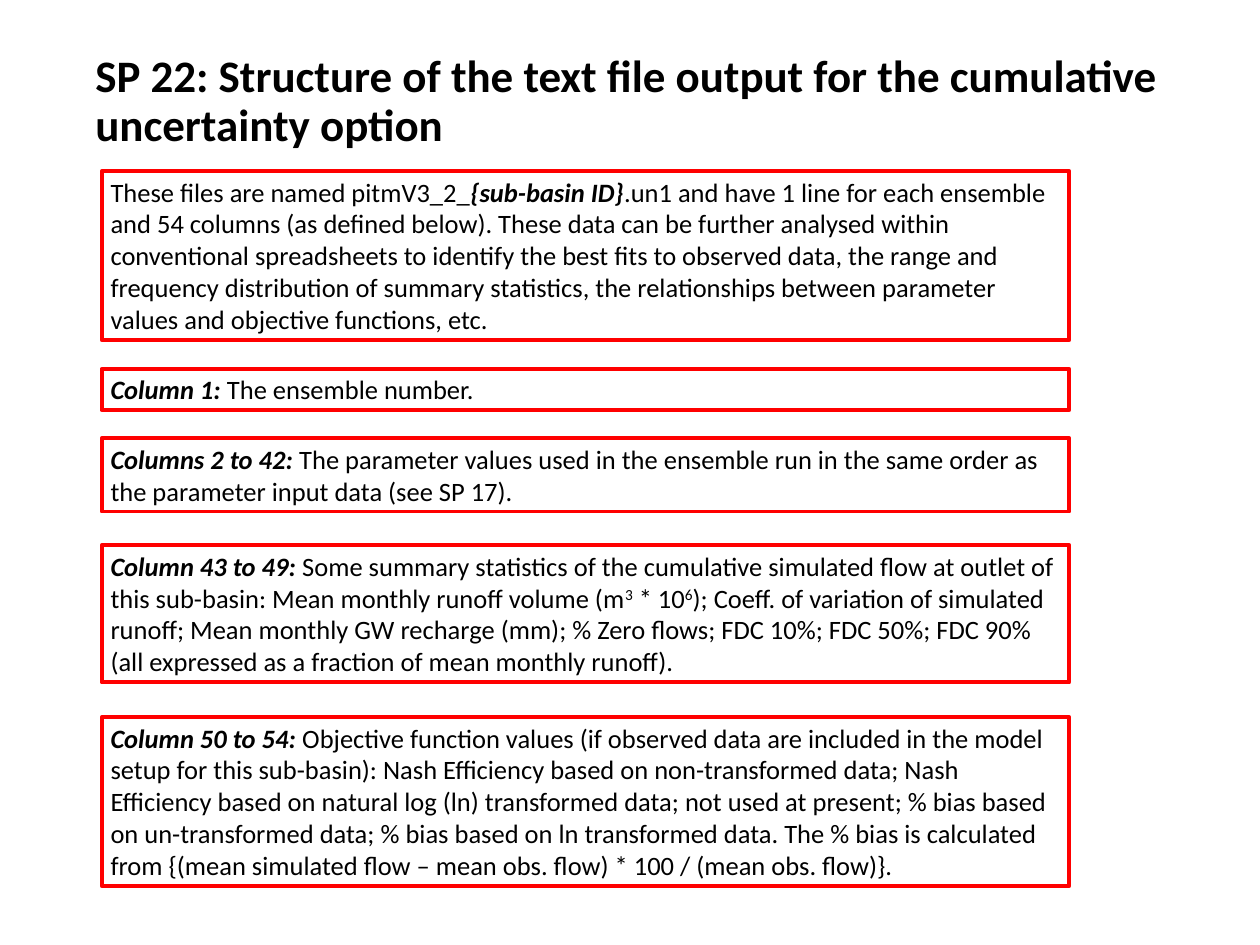
from pptx import Presentation
from pptx.dml.color import RGBColor
from pptx.enum import shapes, text
from pptx.util import Cm, Pt

BLACK = RGBColor(0x00, 0x00, 0x00)
WHITE = RGBColor(0xFF, 0xFF, 0xFF)
RED = RGBColor(0xFF, 0x00, 0x00)
FONT = "Calibri"

BOX_LEFT, BOX_WIDTH = 2.87, 27.31
LINE_HEIGHT, BOX_PADDING = 0.9, 0.27

TITLE = "SP 22: Structure of the text file output for the cumulative uncertainty option"

# Each note: top in cm, number of text lines, runs as (wording, style)
NOTES = [
    (4.83, 5, [
        ("These files are named pitmV3_2_", ""),
        ("{sub-basin ID}", "strong"),
        (".un1 and have 1 line for each ensemble and 54 columns (as defined below). "
         "These data can be further analysed within conventional spreadsheets to "
         "identify the best fits to observed data, the range and frequency "
         "distribution of summary statistics, the relationships between parameter "
         "values and objective functions, etc.", ""),
    ]),
    (10.41, 1, [
        ("Column 1:", "strong"),
        (" The ensemble number.", ""),
    ]),
    (12.37, 2, [
        ("Columns 2 to 42:", "strong"),
        (" The parameter values used in the ensemble run in the same order as the "
         "parameter input data (see SP 17).", ""),
    ]),
    (15.39, 4, [
        ("Column 43 to 49:", "strong"),
        (" Some summary statistics of the cumulative simulated flow at outlet of "
         "this sub-basin: Mean monthly runoff volume (m", ""),
        ("3", "super"),
        (" * 10", ""),
        ("6", "super"),
        ("); Coeff. of variation of simulated runoff; Mean monthly GW recharge (mm); "
         "% Zero flows; FDC 10%; FDC 50%; FDC 90% (all expressed as a fraction of "
         "mean monthly runoff).", ""),
    ]),
    (20.24, 5, [
        ("Column 50 to 54:", "strong"),
        (" Objective function values (if observed data are included in the model "
         "setup for this sub-basin): Nash Efficiency based on non-transformed data; "
         "Nash Efficiency based on natural log (ln) transformed data; not used at "
         "present; % bias based on un-transformed data; % bias based on ln "
         "transformed data. The % bias is calculated from {(mean simulated flow – "
         "mean obs. flow) * 100 / (mean obs. flow)}.", ""),
    ]),
]


def add_run(paragraph, wording, size, bold=False, italic=False):
    run = paragraph.add_run()
    run.text = wording
    font = run.font
    font.name, font.size = FONT, Pt(size)
    font.bold, font.italic = bold, italic
    font.color.rgb = BLACK
    return run


def add_title(slide):
    title = slide.shapes.add_textbox(Cm(2.44), Cm(0.97), Cm(30.66), Cm(3.86))
    frame = title.text_frame
    frame.word_wrap = True
    frame.vertical_anchor = text.MSO_ANCHOR.MIDDLE
    paragraph = frame.paragraphs[0]
    paragraph.line_spacing = 0.9
    add_run(paragraph, TITLE, 36, bold=True)


def add_note(slide, top, line_count, runs):
    """Add a red-framed box as tall as its lines of text."""
    height = BOX_PADDING + LINE_HEIGHT * line_count
    note = slide.shapes.add_shape(shapes.MSO_SHAPE.RECTANGLE, Cm(BOX_LEFT), Cm(top),
                                  Cm(BOX_WIDTH), Cm(height))
    note.shadow.inherit = False
    note.fill.solid()
    note.fill.fore_color.rgb = WHITE
    note.line.color.rgb = RED
    note.line.width = Pt(3)

    frame = note.text_frame
    frame.word_wrap = True
    frame.auto_size = text.MSO_AUTO_SIZE.SHAPE_TO_FIT_TEXT
    frame.vertical_anchor = text.MSO_ANCHOR.TOP
    paragraph = frame.paragraphs[0]
    paragraph.alignment = text.PP_ALIGN.LEFT
    for wording, style in runs:
        strong = style == "strong"
        run = add_run(paragraph, wording, 21.2, bold=strong, italic=strong)
        if style == "super":
            run.font._element.set("baseline", "30000")


def main():
    deck = Presentation()
    deck.slide_width, deck.slide_height = Cm(35.56), Cm(26.67)
    slide = deck.slides.add_slide(deck.slide_layouts[6])
    add_title(slide)
    for top, line_count, runs in NOTES:
        add_note(slide, top, line_count, runs)
    deck.save("out.pptx")


if __name__ == "__main__":
    main()
